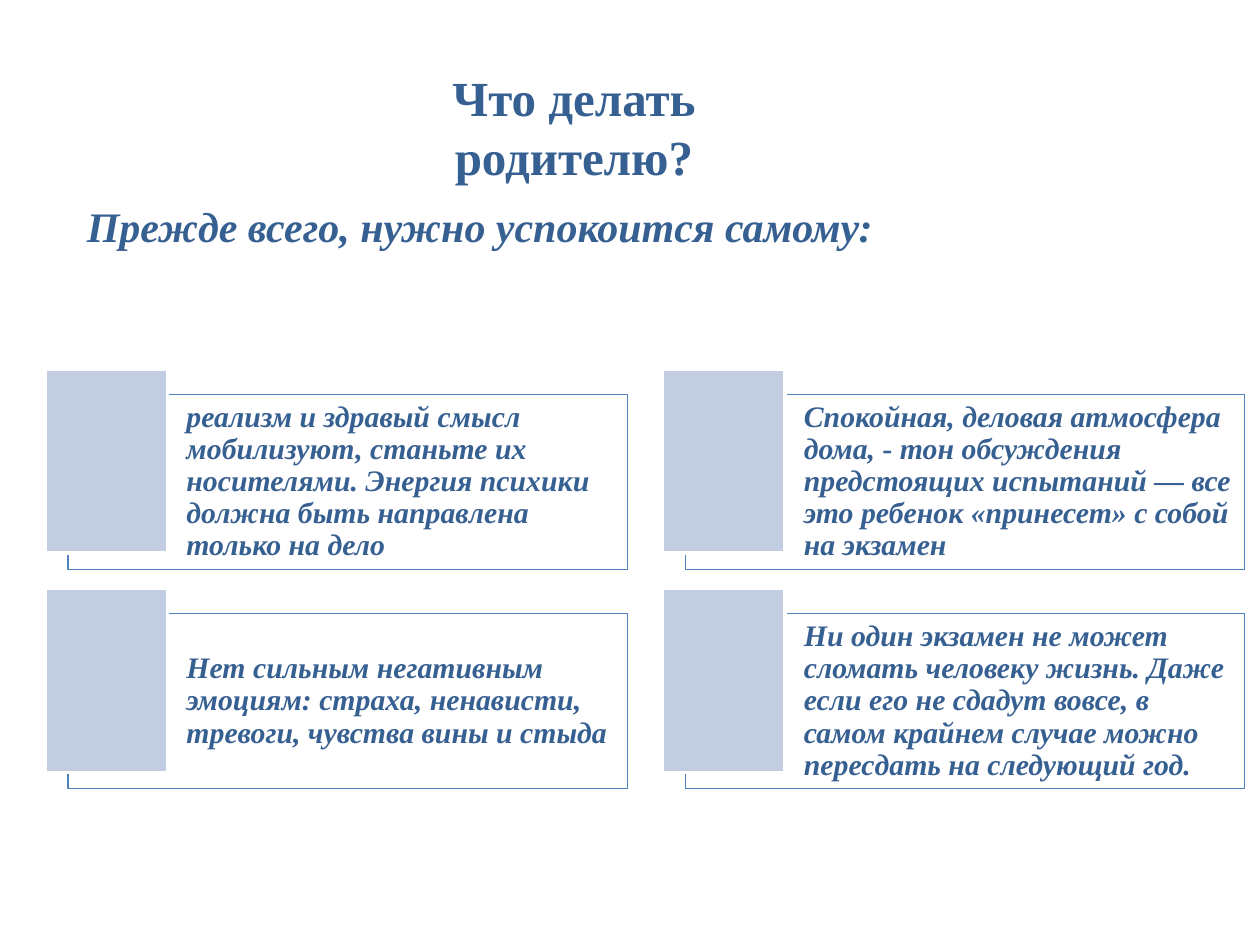
from dataclasses import dataclass

from pptx import Presentation
from pptx.dml.color import RGBColor
from pptx.enum.shapes import MSO_SHAPE as Shape
from pptx.enum.text import MSO_ANCHOR as Anchor, PP_ALIGN as Align
from pptx.oxml.ns import qn
from pptx.util import Inches, Pt
from lxml.etree import SubElement


@dataclass(frozen=True)
class Theme:
    font: str = "Times New Roman"
    ink: RGBColor = RGBColor(0x37, 0x60, 0x92)
    border: RGBColor = RGBColor(0x4F, 0x81, 0xBD)
    tile: RGBColor = RGBColor(0xC2, 0xCD, 0xE1)
    white: RGBColor = RGBColor(0xFF, 0xFF, 0xFF)
    title_size: int = 28
    lead_size: int = 24
    card_size: int = 17


THEME = Theme()

# Card grid, in inches
CARD_LEFT, CARD_TOP, CARD_W, CARD_H = 0.54, 3.13, 4.44, 1.39
COLUMN_STEP, ROW_STEP = 4.9, 1.74
TILE_SHIFT_X, TILE_SHIFT_Y, TILE_W, TILE_H = 0.18, 0.2, 0.97, 1.46

ADVICE = [
    "реализм и здравый смысл мобилизуют, станьте их носителями. "
    "Энергия психики должна быть направлена только на дело",
    "Спокойная, деловая атмосфера дома, - тон обсуждения предстоящих "
    "испытаний — все это ребенок «принесет» с собой на экзамен",
    "Нет сильным негативным эмоциям: страха, ненависти, тревоги, "
    "чувства вины и стыда",
    "Ни один экзамен не может сломать человеку жизнь. Даже если его "
    "не сдадут вовсе, в самом крайнем случае можно пересдать "
    "на следующий год.",
]


def write(frame, text, size, insets, align=Align.LEFT, italic=True):
    """Fill a frame with one bold paragraph; insets are left, top, right, bottom."""
    frame.word_wrap = True
    (frame.margin_left, frame.margin_top,
     frame.margin_right, frame.margin_bottom) = map(Inches, insets)
    paragraph = frame.paragraphs[0]
    paragraph.text = text
    paragraph.alignment = align
    font = paragraph.font
    font.name, font.size = THEME.font, Pt(size)
    font.bold, font.italic = True, italic
    font.color.rgb = THEME.ink
    return paragraph


def add_heading(slide, box, *text_args, **text_options):
    heading = slide.shapes.add_textbox(*map(Inches, box))
    write(heading.text_frame, *text_args, **text_options)


def add_rect(slide, box, fill, line, line_width):
    rect = slide.shapes.add_shape(Shape.RECTANGLE, *map(Inches, box))
    rect.shadow.inherit = False
    rect.fill.solid()
    rect.fill.fore_color.rgb = fill
    rect.line.color.rgb = line
    rect.line.width = Pt(line_width)
    return rect


def add_card(slide, left, top, text):
    # Bordered panel with a 40 % opaque fill
    panel = add_rect(slide, (left, top, CARD_W, CARD_H),
                     THEME.white, THEME.border, 0.75)
    fill_color = panel.fill._xPr.find(qn("a:solidFill"))[0]
    SubElement(fill_color, qn("a:alpha")).set("val", "40000")
    panel.text_frame.vertical_anchor = Anchor.MIDDLE
    paragraph = write(panel.text_frame, text, THEME.card_size,
                      (0.94, 0.07, 0.07, 0.07))
    paragraph.line_spacing = 0.9

    # Tile overlapping the panel's left edge
    add_rect(slide, (left - TILE_SHIFT_X, top - TILE_SHIFT_Y, TILE_W, TILE_H),
             THEME.tile, THEME.white, 2)


def main():
    deck = Presentation()
    deck.slide_width, deck.slide_height = Inches(10), Inches(7.5)
    slide = deck.slides.add_slide(deck.slide_layouts[6])

    # Headings: the title's side insets break it into two lines
    add_heading(slide, (2.5, 0.49, 4.11, 0.56), "Что делать родителю?",
                THEME.title_size, (0.3, 0.05, 0.3, 0.05),
                align=Align.CENTER, italic=False)
    add_heading(slide, (0.59, 1.22, 9.21, 0.83),
                "Прежде всего, нужно успокоится самому:",
                THEME.lead_size, (0.1, 0.37, 0.1, 0.05))

    # Two by two advice cards
    for index, text in enumerate(ADVICE):
        row, column = divmod(index, 2)
        add_card(slide, CARD_LEFT + column * COLUMN_STEP,
                 CARD_TOP + row * ROW_STEP, text)

    deck.save("out.pptx")


if __name__ == "__main__":
    main()
